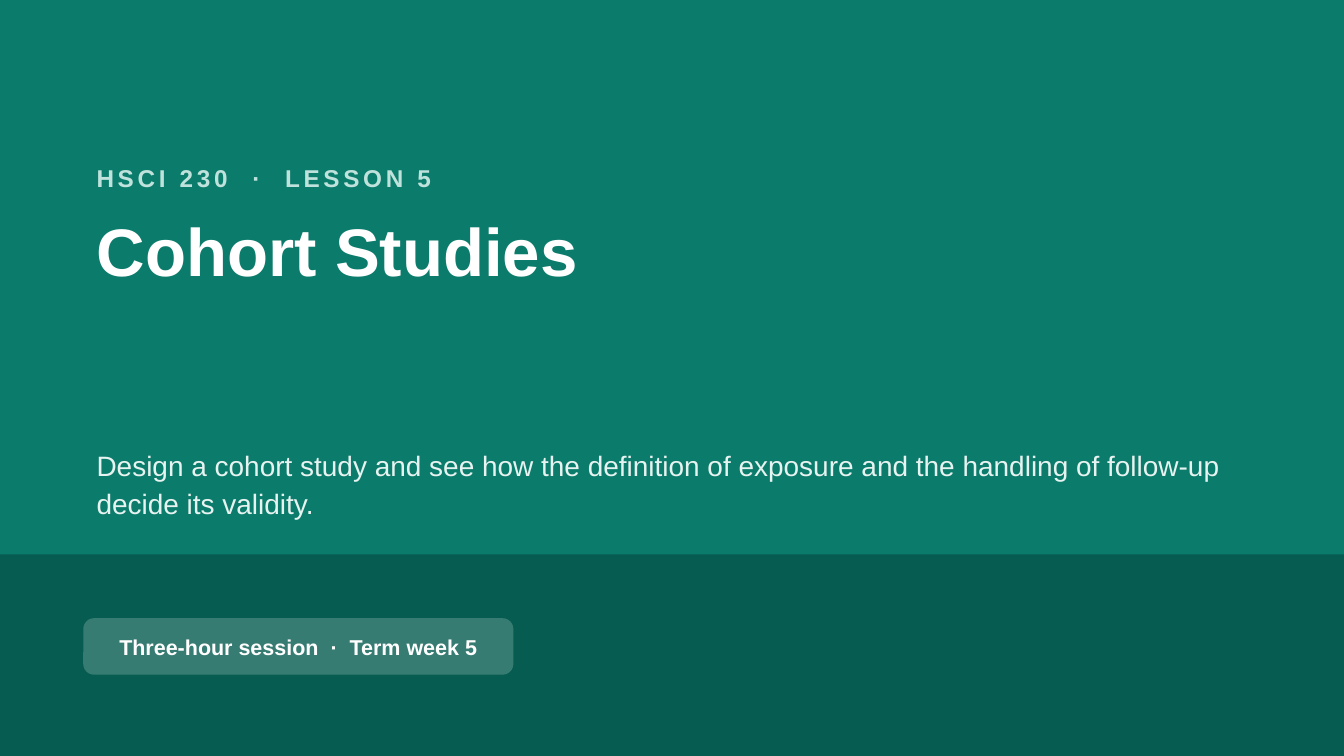
from dataclasses import dataclass

from lxml import etree
from pptx import Presentation
from pptx.dml.color import RGBColor
from pptx.enum import shapes, text
from pptx.oxml.ns import qn
from pptx.util import Pt


@dataclass(frozen=True)
class Theme:
    font: str = "Arial"
    background: str = "0B7B6B"
    band: str = "065C50"
    white: str = "FFFFFF"
    kicker: str = "BFE3DC"
    summary: str = "E6F3F0"
    kicker_size: float = 13
    title_size: float = 36
    summary_size: float = 15
    badge_size: float = 11.5


@dataclass(frozen=True)
class Box:
    left: float
    top: float
    width: float
    height: float

    def lengths(self) -> tuple:
        return Pt(self.left), Pt(self.top), Pt(self.width), Pt(self.height)


@dataclass(frozen=True)
class Label:
    words: str
    box: Box
    size: float
    color: str
    bold: bool = True
    middle: bool = False
    centered: bool = False
    line_spacing: float | None = None
    tracking: float = 0


THEME = Theme()
WIDTH, HEIGHT = 720, 405
MARGIN, TEXT_WIDTH = 44.64, 640.8
BAND = Box(0, 297, WIDTH, HEIGHT - 297)
BADGE = Box(MARGIN, 331.2, 230.4, 30.24)

LABELS = (
    Label("HSCI 230  ·  LESSON 5", Box(MARGIN, 80.64, TEXT_WIDTH, 28.8),
          THEME.kicker_size, THEME.kicker, middle=True, tracking=2),
    Label("Cohort Studies", Box(MARGIN, 108, TEXT_WIDTH, 111.6),
          THEME.title_size, THEME.white, line_spacing=1.02),
    Label("Design a cohort study and see how the definition of exposure and "
          "the handling of follow-up decide its validity.",
          Box(MARGIN, 234, TEXT_WIDTH, 57.6),
          THEME.summary_size, THEME.summary, bold=False, line_spacing=1.15),
    Label("Three-hour session  ·  Term week 5", BADGE,
          THEME.badge_size, THEME.white, middle=True, centered=True),
)


def add_panel(slide, kind: shapes.MSO_SHAPE, box: Box, color: str):
    sp = slide.shapes.add_shape(kind, *box.lengths())
    sp.shadow.inherit = False
    sp.fill.solid()
    sp.fill.fore_color.rgb = RGBColor.from_string(color)
    sp.line.fill.background()
    return sp


def set_opacity(sp, percent: int) -> None:
    color = sp.fill._xPr.find(qn("a:solidFill"))[0]
    etree.SubElement(color, qn("a:alpha")).set("val", str(percent * 1000))


def add_label(slide, label: Label) -> None:
    tf = slide.shapes.add_textbox(*label.box.lengths()).text_frame
    tf.word_wrap = True
    tf.vertical_anchor = (text.MSO_ANCHOR.MIDDLE if label.middle
                          else text.MSO_ANCHOR.TOP)
    p = tf.paragraphs[0]
    p.alignment = text.PP_ALIGN.CENTER if label.centered else text.PP_ALIGN.LEFT
    if label.line_spacing:
        p.line_spacing = label.line_spacing
    r = p.add_run()
    r.text = label.words
    p.font.name = THEME.font
    p.font.size = Pt(label.size)
    p.font.bold = label.bold
    p.font.color.rgb = RGBColor.from_string(label.color)
    if label.tracking:
        r._r.get_or_add_rPr().set("spc", str(round(label.tracking * 100)))


def main() -> None:
    prs = Presentation()
    prs.slide_width, prs.slide_height = Pt(WIDTH), Pt(HEIGHT)
    slide = prs.slides.add_slide(prs.slide_layouts[6])

    # Background and lower band
    slide.background.fill.solid()
    slide.background.fill.fore_color.rgb = RGBColor.from_string(THEME.background)
    add_panel(slide, shapes.MSO_SHAPE.RECTANGLE, BAND, THEME.band)

    # Translucent session badge
    badge = add_panel(slide, shapes.MSO_SHAPE.ROUNDED_RECTANGLE, BADGE, THEME.white)
    badge.adjustments[0] = 0.19
    set_opacity(badge, 20)

    # Course, title, summary and session text
    for label in LABELS:
        add_label(slide, label)

    prs.save("out.pptx")


if __name__ == "__main__":
    main()
